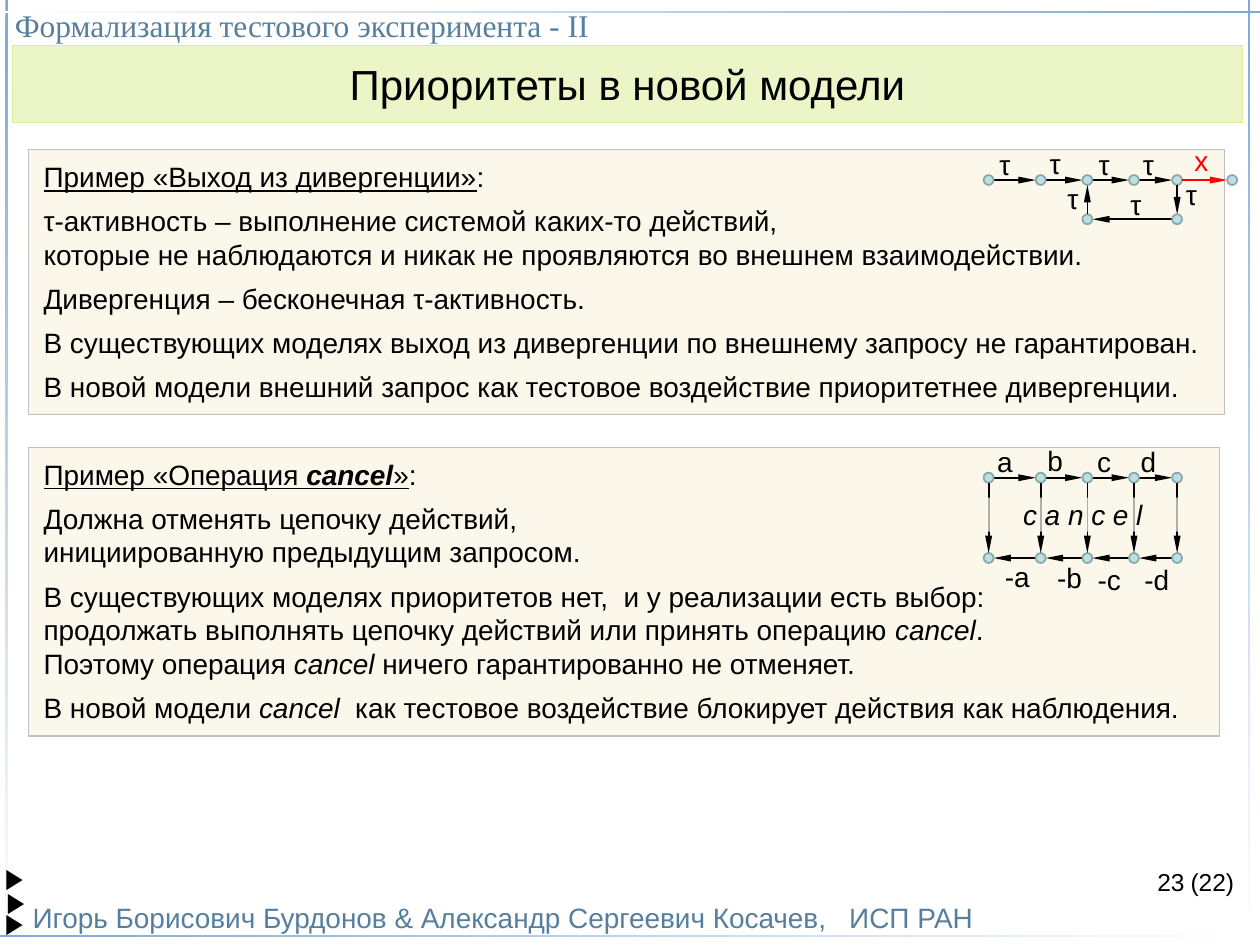
from math import hypot

from lxml.etree import SubElement
from pptx import Presentation
from pptx.dml.color import RGBColor
from pptx.enum.shapes import MSO_CONNECTOR as LINK, MSO_SHAPE as SHAPE
from pptx.enum.text import MSO_ANCHOR as ANCHOR, PP_ALIGN as ALIGN
from pptx.oxml.ns import qn
from pptx.util import Cm, Pt

BLACK = RGBColor(0, 0, 0)
RED = RGBColor(0xFF, 0, 0)
WHITE = RGBColor(0xFF, 0xFF, 0xFF)
BLUE = RGBColor(0x7F, 0xA9, 0xD3)
STEEL = RGBColor(0x56, 0x7F, 0x9E)
LIME = RGBColor(0xEB, 0xF5, 0xC7)
LIME_EDGE = RGBColor(0xDB, 0xED, 0x97)
CREAM = RGBColor(0xFB, 0xF8, 0xEB)
GREY = RGBColor(0xC0, 0xC0, 0xC0)
AQUA = RGBColor(0xBB, 0xE0, 0xE3)
AQUA_EDGE = RGBColor(0x8A, 0xA6, 0xA8)

# A paragraph is (space after in points, runs); a run is (text, styles b/i/u).
EXIT = [
    (6, [("Пример «Выход из дивергенции»", "u"), (":", "")]),
    (0, [("τ-активность – выполнение системой каких-то действий,", "")]),
    (6, [("которые не наблюдаются и никак не проявляются во внешнем взаимодействии.", "")]),
    (6, [("Дивергенция – бесконечная τ-активность.", "")]),
    (6, [("В существующих моделях выход из дивергенции по внешнему запросу не гарантирован.", "")]),
    (6, [("В новой модели внешний запрос как тестовое воздействие приоритетнее дивергенции.", "")]),
]
CANCEL = [
    (6, [("Пример «Операция ", "u"), ("cancel", "ubi"), ("»", "u"), (":", "")]),
    (0, [("Должна отменять цепочку действий,", "")]),
    (6, [("инициированную предыдущим запросом.", "")]),
    (0, [("В существующих моделях приоритетов нет,  и у реализации есть выбор:", "")]),
    (0, [("продолжать выполнять цепочку действий или принять операцию ", ""),
         ("cancel", "i"), (".", "")]),
    (6, [("Поэтому операция ", ""), ("cancel", "i"),
         (" ничего гарантированно не отменяет.", "")]),
    (6, [("В новой модели ", ""), ("cancel", "i"),
         ("  как тестовое воздействие блокирует действия как наблюдения.", "")]),
]

# Left, top, width, height, first colour, last colour, gradient angle
RULES = [
    (0.11, 0, 0.05, 19.05, BLUE, WHITE, 270),
    (0, 0.22, 25.4, 0.05, WHITE, BLUE, 0),
    (0, 18.85, 25.4, 0.05, BLUE, WHITE, 0),
    (25.15, 0, 0.05, 19.05, BLUE, WHITE, 270),
]
MARKS = [(0.1, 17.35), (0.13, 17.83), (0.1, 18.26)]

# Graphs: node columns and rows; labels as (text, centre, top)
COLS = [19.93, 20.98, 21.92, 22.86, 23.73]
LAST = 24.84
CHAIN, LOOP, DO, UNDO = 3.63, 4.42, 9.63, 11.25
DOT = 0.2
HIGH = 0.69
SPOTS = [(20.26, 2.97), (21.27, 2.95), (22.26, 2.97), (23.15, 2.97)]
DROP = DO - CHAIN
LABELS = [("τ", x, y) for x, y in SPOTS]
LABELS += [("τ", 24.02, 3.58), ("τ", 22.9, 3.78), ("τ", 21.63, 3.66)]
STEPS = [(name, x, y + DROP) for name, (x, y) in zip("abcd", SPOTS)]
STEPS += [("-a", 20.51, 11.28), ("-b", 21.56, 11.3),
          ("-c", 22.36, 11.35), ("-d", 23.32, 11.35)]

deck = Presentation()
deck.slide_width, deck.slide_height = Cm(25.4), Cm(19.05)
slide = deck.slides.add_slide(deck.slide_layouts[6])
shapes = slide.shapes


def write(shape, text, size=16, color=BLACK, font="Arial", align=ALIGN.LEFT,
          anchor=ANCHOR.TOP, pad=(0, 0), style=""):
    """Fill a shape with a string or with a list of paragraphs."""
    frame = shape.text_frame
    frame.word_wrap = True
    frame.vertical_anchor = anchor
    frame.margin_left = frame.margin_right = Cm(pad[0])
    frame.margin_top = frame.margin_bottom = Cm(pad[1])
    paras = [(0, [(text, style)])] if isinstance(text, str) else text
    for i, (after, runs) in enumerate(paras):
        para = frame.add_paragraph() if i else frame.paragraphs[0]
        para.alignment = align
        para.space_after = Pt(after)
        for words, marks in runs:
            run = para.add_run()
            run.text = words
            face = run.font
            face.name, face.size, face.color.rgb = font, Pt(size), color
            face.bold, face.italic = "b" in marks, "i" in marks
            face.underline = "u" in marks


def note(text, x, y, w, h=HIGH, **form):
    write(shapes.add_textbox(Cm(x), Cm(y), Cm(w), Cm(h)), text, **form)


def draw(kind, x, y, w, h, fill=None, edge=None, width=0.75):
    shape = shapes.add_shape(kind, Cm(x), Cm(y), Cm(w), Cm(h))
    shape.shadow.inherit = False
    if fill is not None:
        shape.fill.solid()
        shape.fill.fore_color.rgb = fill
    if edge is None:
        shape.line.fill.background()
    else:
        shape.line.color.rgb = edge
        shape.line.width = Pt(width)
    return shape


def label(text, x, y, color=BLACK):
    note(text, x - 0.35, y, 0.7, color=color, align=ALIGN.CENTER)


def node(x, y):
    draw(SHAPE.OVAL, x - DOT / 2, y - DOT / 2, DOT, DOT, AQUA, AQUA_EDGE, 1)


def arrow(a, b, color=BLACK):
    """Join two node centres, from rim to rim."""
    (ax, ay), (bx, by) = a, b
    part = DOT / 2 / hypot(bx - ax, by - ay)
    dx, dy = (bx - ax) * part, (by - ay) * part
    line = shapes.add_connector(LINK.STRAIGHT, Cm(ax + dx), Cm(ay + dy),
                                Cm(bx - dx), Cm(by - dy))
    line.line.color.rgb = color
    line.line.width = Pt(1)
    SubElement(line.line._get_or_add_ln(), qn("a:tailEnd"),
               type="triangle", w="sm", len="lg")
    SubElement(line._element.spPr, qn("a:effectLst"))


def trail(points):
    for a, b in zip(points, points[1:]):
        arrow(a, b)
    for point in points:
        node(*point)


# Frame, header and footer
for x, y, w, h, first, last, angle in RULES:
    fill = draw(SHAPE.RECTANGLE, x, y, w, h).fill
    fill.gradient()
    fill.gradient_angle = angle
    for stop, color in zip(fill.gradient_stops, (first, last)):
        stop.color.rgb = color
note("Игорь Борисович Бурдонов & Александр Сергеевич Косачев,   ИСП РАН",
     0.66, 18.14, 20, color=STEEL, anchor=ANCHOR.BOTTOM)
note("Формализация тестового эксперимента - II", 0.3, 0.13, 24.7, 0.76,
     size=18, color=STEEL, font="Times New Roman")
note("23", 18.21, 17.35, 5.92, 1.32, size=14, align=ALIGN.RIGHT, pad=(0.25, 0.13))
note("(22)", 24, 17.48, 1.1, 0.6, size=14)
for x, y in MARKS:
    note("▶", x, y, 0.6, font="Times New Roman")
write(draw(SHAPE.RECTANGLE, 0.25, 0.92, 24.8, 1.55, LIME, LIME_EDGE),
      "Приоритеты в новой модели", size=24, align=ALIGN.CENTER, anchor=ANCHOR.MIDDLE)

# Leaving a divergence
write(draw(SHAPE.RECTANGLE, 0.58, 3.02, 24.11, 5.34, CREAM, GREY), EXIT, pad=(0.3, 0.2))
trail([(x, CHAIN) for x in COLS])
left, right = COLS[2], COLS[4]
arrow((right, CHAIN), (right, LOOP))
trail([(right, LOOP), (left, LOOP)])
arrow((left, LOOP), (left, CHAIN))
arrow((right, CHAIN), (LAST, CHAIN), RED)
node(LAST, CHAIN)
for item in LABELS:
    label(*item)
label("x", 24.22, 2.9, RED)

# The cancel operation
write(draw(SHAPE.RECTANGLE, 0.58, 9.02, 24, 5.82, CREAM, GREY), CANCEL, pad=(0.3, 0.2))
trail([(x, DO) for x in COLS])
trail([(x, UNDO) for x in reversed(COLS)])
for x in COLS:
    arrow((x, DO), (x, UNDO))
for item in STEPS:
    label(*item)
veil = draw(SHAPE.RECTANGLE, 19.83, 10.03, 4, HIGH, CREAM)
tint = veil._element.spPr.find(qn("a:solidFill"))[0]
SubElement(tint, qn("a:alpha"), val="70000")
write(veil, "c a n c e l", align=ALIGN.CENTER, style="i")

deck.save("out.pptx")
